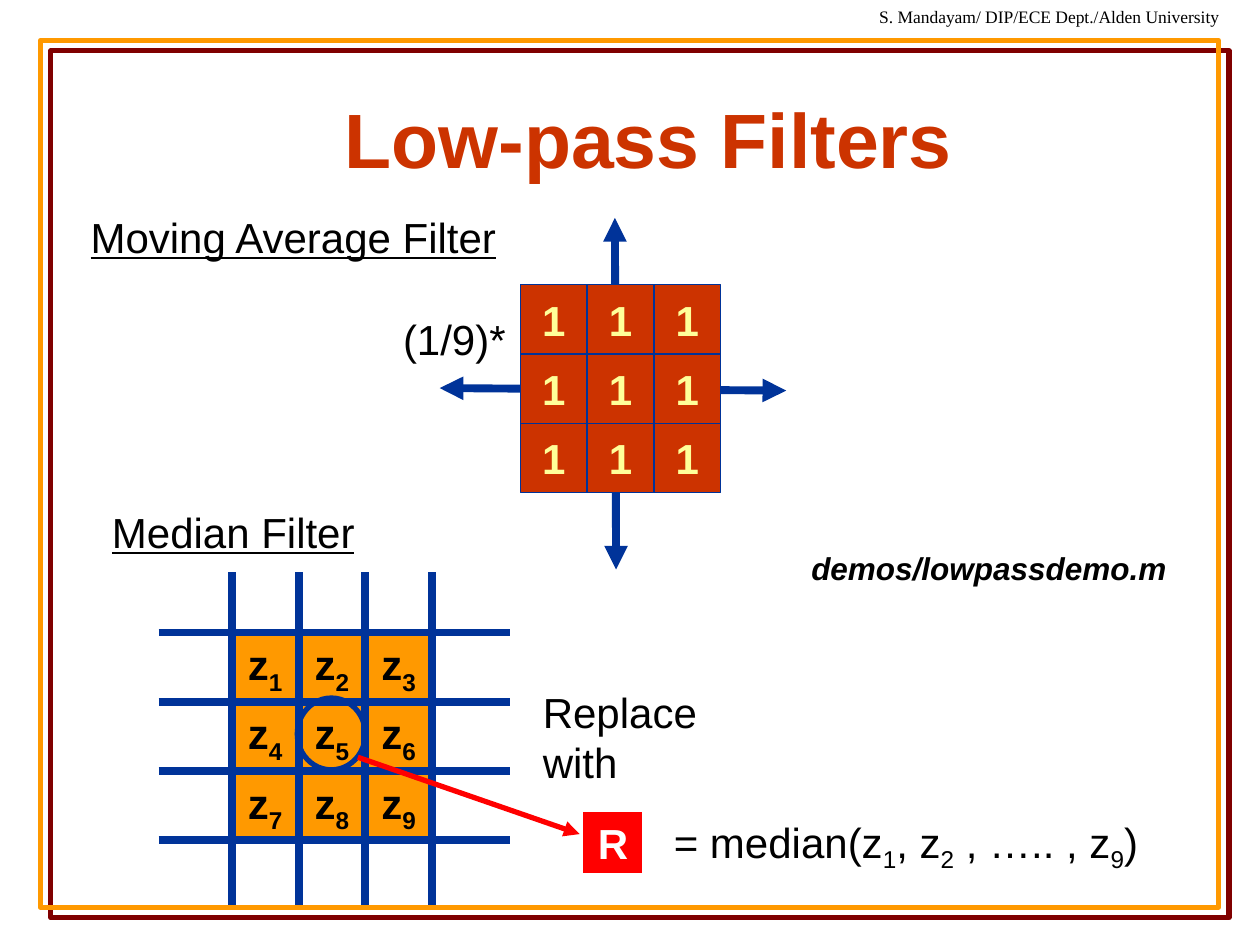
import pptx
import pptx.util
import pptx.dml.color
import pptx.enum.shapes
import pptx.enum.text
import pptx.oxml.ns
import lxml.etree

Inches = pptx.util.Inches
Pt = pptx.util.Pt
Shapes = pptx.enum.shapes.MSO_SHAPE
Align = pptx.enum.text.PP_ALIGN
Anchor = pptx.enum.text.MSO_ANCHOR
qn = pptx.oxml.ns.qn

COLORS = {
    "black": "000000", "white": "FFFFFF", "orange": "FF9900", "maroon": "800000",
    "rust": "CC3300", "navy": "003399", "cream": "FFFF99", "red": "FF0000",
}

# Odd entries of a paragraph are subscripts.
HEADER = [["S. Mandayam/ DIP/ECE Dept./Alden University"]]
TITLE = [["Low-pass Filters"]]
DEMO = [["demos/lowpassdemo.m"]]
BODY_TEXTS = [
    ((0.62, 1.63, 3.45, 0.5), [["Moving Average Filter"]], True),
    ((5.25, 6.43, 3.93, 0.5), [["= median(z", "1", ", z", "2", " , ….. , z", "9", ")"]], False),
    ((4.21, 5.4, 1.43, 0.9), [["Replace"], ["with"]], False),
    ((3.1, 2.44, 1.02, 0.5), [["(1/9)*"]], False),
    ((0.79, 3.97, 2.13, 0.5), [["Median Filter"]], True),
]
AVERAGE_CELLS = [["1"]] * 9
MEDIAN_CELLS = [["z", str(number)] for number in range(1, 10)]
AVERAGE_AXES = [((4.88, 1.73), (4.89, 4.52)), ((3.49, 3.08), (6.24, 3.1))]

CELL_WIDTH, CELL_HEIGHT = 0.53, 0.55
AVERAGE_LEFT, AVERAGE_TOP = 4.13, 2.26
MEDIAN_LEFT, MEDIAN_TOP = 1.84, 5.02
RULE_LEFT, RULE_RIGHT, RULE_TOP, RULE_BOTTOM = 1.26, 4.05, 4.54, 7.18

deck = pptx.Presentation()
deck.slide_width, deck.slide_height = Inches(10), Inches(7.5)
page = deck.slides.add_slide(deck.slide_layouts[6])


def rgb(name):
    return pptx.dml.color.RGBColor.from_string(COLORS[name])


def write(box, paragraphs, size=24, color="black", font="Arial", bold=False,
          italic=False, underline=False, align=Align.LEFT, wrap=False):
    frame = box.text_frame
    frame.word_wrap = wrap
    for index, pieces in enumerate(paragraphs):
        para = frame.add_paragraph() if index else frame.paragraphs[0]
        para.alignment = align
        for position, piece in enumerate(pieces):
            span = para.add_run()
            span.text = piece
            span.font.size, span.font.name = Pt(size), font
            span.font.bold, span.font.italic = bold, italic
            span.font.underline = underline
            span.font.color.rgb = rgb(color)
            if position % 2:
                span.font._element.set("baseline", "-25000")


def add_text(place, paragraphs, **style):
    box = page.shapes.add_textbox(*map(Inches, place))
    write(box, paragraphs, **style)
    return box


def add_figure(kind, place, fill, line, width):
    box = page.shapes.add_shape(kind, *map(Inches, place))
    box.shadow.inherit = False
    if fill:
        box.fill.solid()
        box.fill.fore_color.rgb = rgb(fill)
    else:
        box.fill.background()
    box.line.color.rgb = rgb(line)
    box.line.width = Pt(width)
    return box


def add_label_box(place, pieces, fill, line, width, color):
    box = add_figure(Shapes.RECTANGLE, place, fill, line, width)
    write(box, [pieces], color=color, bold=True, align=Align.CENTER)
    box.text_frame.vertical_anchor = Anchor.MIDDLE


def add_grid(left, top, cells, fill, color):
    for index, pieces in enumerate(cells):
        row, column = divmod(index, 3)
        place = (left + column * CELL_WIDTH, top + row * CELL_HEIGHT,
                 CELL_WIDTH, CELL_HEIGHT)
        add_label_box(place, pieces, fill, "navy", 0.75, color)


def add_line(start, end, color="navy", width=4.5, arrows=()):
    line = page.shapes.add_connector(
        pptx.enum.shapes.MSO_CONNECTOR.STRAIGHT, *map(Inches, start + end))
    line.line.color.rgb = rgb(color)
    line.line.width = Pt(width)
    for arrow in arrows:
        lxml.etree.SubElement(line.line._get_or_add_ln(), qn("a:" + arrow), type="triangle")
    lxml.etree.SubElement(line._element.spPr, qn("a:effectLst"))


border = add_figure(Shapes.RECTANGLE, (0.32, 0.32, 9.35, 6.88), None, "orange", 3)
effects = border._element.spPr.find(qn("a:effectLst"))
shadow = lxml.etree.SubElement(effects, qn("a:outerShdw"), dist=str(Pt(8.5)),
                               dir="2700000", algn="ctr", rotWithShape="0")
lxml.etree.SubElement(shadow, qn("a:srgbClr"), val=COLORS["maroon"])

add_text((6.88, 0, 2.97, 0.27), HEADER, size=10, font="Times New Roman")
title = add_text((0.9, 0.47, 8.5, 1.25), TITLE, size=44, color="rust", bold=True,
                 align=Align.CENTER, wrap=True)
title.text_frame.vertical_anchor = Anchor.MIDDLE

add_label_box((4.6, 6.41, 0.53, 0.55), ["R"], "red", "white", 4.5, "white")

for start, end in AVERAGE_AXES:
    add_line(start, end, arrows=("headEnd", "tailEnd"))
add_grid(AVERAGE_LEFT, AVERAGE_TOP, AVERAGE_CELLS, "rust", "cream")

add_grid(MEDIAN_LEFT, MEDIAN_TOP, MEDIAN_CELLS, "orange", "black")
for step in range(4):
    rule_y = MEDIAN_TOP + step * CELL_HEIGHT
    rule_x = MEDIAN_LEFT + step * CELL_WIDTH
    add_line((RULE_LEFT, rule_y), (RULE_RIGHT, rule_y))
    add_line((rule_x, RULE_TOP), (rule_x, RULE_BOTTOM))

add_figure(Shapes.OVAL, (2.36, 5.54, 0.54, 0.57), None, "navy", 3)
add_line((2.84, 6.01), (4.6, 6.62), "red", 3, ("tailEnd",))

for place, paragraphs, underline in BODY_TEXTS:
    add_text(place, paragraphs, underline=underline)

demo = add_text((5.84, 4.31, 3.55, 0.4), DEMO, size=18, bold=True, italic=True, wrap=True)
demo_para = demo.text_frame.paragraphs[0]
demo_para.level = 1
demo_para._p.get_or_add_pPr().set("marL", str(Inches(0.5)))

deck.save("out.pptx")
